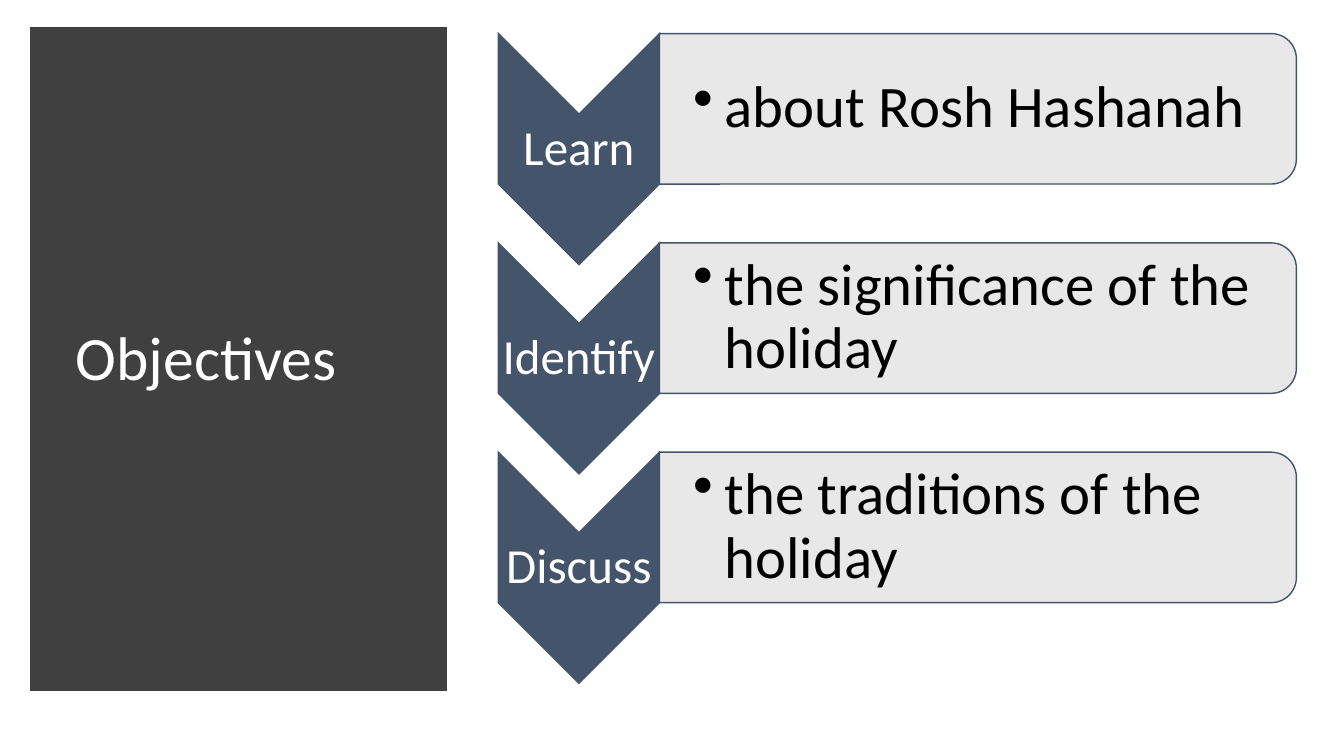
from lxml.etree import SubElement
from pptx import Presentation
from pptx.dml.color import RGBColor
from pptx.enum.shapes import MSO_SHAPE
from pptx.enum.text import MSO_ANCHOR, PP_ALIGN
from pptx.oxml.ns import qn
from pptx.util import Emu, Pt

SCALE = 6350
FONT = "Calibri"
COLORS = {
    "panel": "404040",
    "navy": "44546A",
    "pale": "E7E6E6",
    "white": "FFFFFF",
    "black": "000000",
}
STEPS = [
    ("Learn", "about Rosh Hashanah"),
    ("Identify", "the significance of the holiday"),
    ("Discuss", "the traditions of the holiday"),
]


def px(num):
    """Turn px into EMU."""
    return Emu(round(num * SCALE))


def color(name):
    """Look up a named colour."""
    return RGBColor.from_string(COLORS[name])


class Deck:
    """Hold the file, its current slide and the shared style."""

    def __init__(self, wide, high):
        """Start a file with one title-only slide."""
        self.file = Presentation()
        self.file.slide_width, self.file.slide_height = px(wide), px(high)
        self.slide = self.file.slides.add_slide(self.file.slide_layouts[5])

    def shape(self, kind, box, fill, line, width=1):
        """Draw a filled preset shape."""
        item = self.slide.shapes.add_shape(kind, *map(px, box))
        item.shadow.inherit = False
        item.fill.solid()
        item.fill.fore_color.rgb = color(fill)
        item.line.color.rgb = color(line)
        item.line.width = Pt(width)
        SubElement(item.line._get_or_add_ln(), qn("a:miter"), lim="800000")
        return item

    def turned(self, kind, box, fill, line):
        """Draw a shape turned by 90 degrees so that it fills the box."""
        x, y, w, h = box
        frame = (x + (w - h) / 2, y + (h - w) / 2, h, w)
        item = self.shape(kind, frame, fill, line)
        item.rotation = 90
        return item

    def label(self, item, text, size, tint, align=PP_ALIGN.LEFT):
        """Fill a text frame with one paragraph, centred in height."""
        frame = item.text_frame
        frame.word_wrap = True
        frame.vertical_anchor = MSO_ANCHOR.MIDDLE
        para = frame.paragraphs[0]
        para.text = text
        para.alignment = align
        para.line_spacing = 0.9
        para.font.name = FONT
        para.font.size = Pt(size)
        para.font.color.rgb = color(tint)
        return para

    def title(self, box, text, size, tint):
        """Place and fill the title."""
        item = self.slide.shapes.title
        item.left, item.top, item.width, item.height = map(px, box)
        self.label(item, text, size, tint)

    def text(self, box, text, size, tint, pad, left, align=PP_ALIGN.LEFT):
        """Add a text box with narrow margins."""
        item = self.slide.shapes.add_textbox(*map(px, box))
        frame = item.text_frame
        frame.margin_top = frame.margin_right = frame.margin_bottom = px(pad)
        frame.margin_left = px(left)
        return self.label(item, text, size, tint, align)

    def bullet(self, para, indent):
        """Give a paragraph a hanging bullet."""
        props = para._p.get_or_add_pPr()
        props.set("marL", str(px(indent)))
        props.set("indent", str(-px(indent)))
        SubElement(props, qn("a:buChar"), char="•").getparent()
        props.append(props.find(qn("a:defRPr")))

    def fade(self, item, percent):
        """Set the opacity of a solid fill."""
        tone = item._element.spPr.find(qn("a:solidFill"))[0]
        SubElement(tone, qn("a:alpha"), val=str(percent * 1000))

    def step(self, top, label, text):
        """Draw one chevron with its label and bar."""
        self.turned(MSO_SHAPE.CHEVRON, (712, top, 230, 330), "navy", "navy")
        self.text((712, top + 116, 230, 99), label, 35, "white", 3, 3,
                  PP_ALIGN.CENTER)
        bar = self.turned(MSO_SHAPE.ROUND_2_SAME_RECTANGLE,
                          (942, top, 910, 215), "pale", "navy")
        self.fade(bar, 90)
        para = self.text((942, top + 11, 900, 193), text, 42, "black", 4, 48)
        self.bullet(para, 45)


def main():
    """Build the slide and save it."""
    deck = Deck(1920, 1080)
    panel = deck.shape(MSO_SHAPE.RECTANGLE, (53, 48, 576, 929),
                       "panel", "panel", 10)
    deck.slide.shapes.title._element.addprevious(panel._element)
    deck.title((94, 101, 498, 828), "Objectives", 44, "white")
    for row, (label, text) in enumerate(STEPS):
        deck.step(48 + 299 * row, label, text)
    deck.file.save("out.pptx")


if __name__ == "__main__":
    main()
